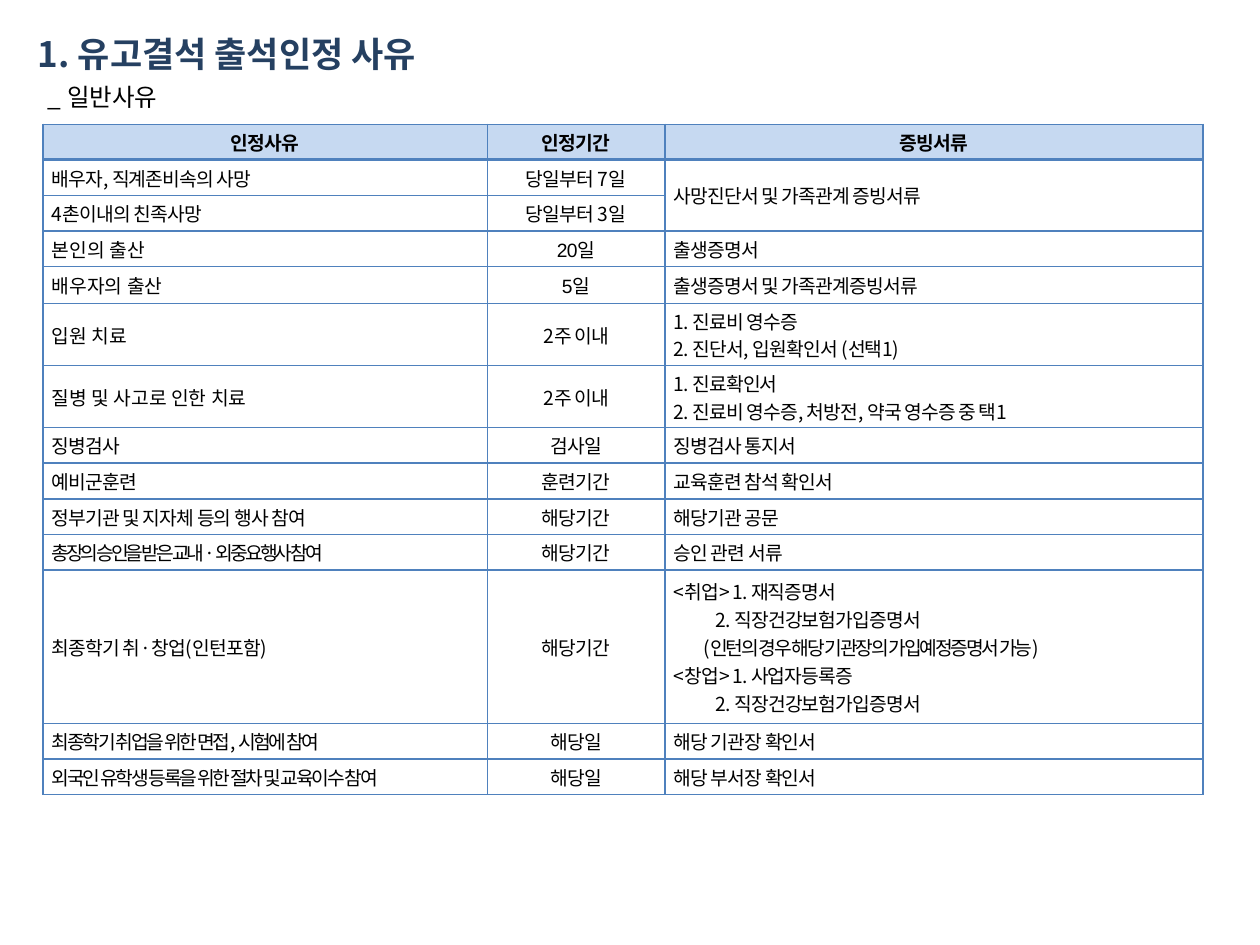
from lxml.etree import SubElement
from pptx import Presentation
from pptx.dml.color import RGBColor
from pptx.enum.text import MSO_ANCHOR, MSO_AUTO_SIZE, PP_ALIGN
from pptx.oxml.ns import qn
from pptx.util import Pt

FONT = "Noto Sans CJK KR"
BLUE, PALE, NAVY, BLACK = "4F81BD", "C6D9F1", "254061", "000000"
COLS = [254, 101.5, 307.5]
LOW = 20.35
HIGH = {4: 21.1, 5: 35.5, 6: 35.5, 11: 87.7}
HEAD = ["인정사유", "인정기간", "증빙서류"]
DEATH = "사망진단서 및 가족관계 증빙서류"
ROWS = [
    ["배우자, 직계존비속의 사망", "당일부터 7일", DEATH],
    ["4촌이내의 친족사망", "당일부터 3일", ""],
    ["본인의 출산", "20일", "출생증명서"],
    ["배우자의 출산", "5일", "출생증명서 및 가족관계증빙서류"],
    ["입원 치료", "2주 이내", "1. 진료비 영수증\n2. 진단서, 입원확인서 (선택1)"],
    ["질병 및 사고로 인한 치료", "2주 이내",
     "1. 진료확인서\n2. 진료비 영수증, 처방전, 약국 영수증 중 택1"],
    ["징병검사", "검사일", "징병검사 통지서"],
    ["예비군훈련", "훈련기간", "교육훈련 참석 확인서"],
    ["정부기관 및 지자체 등의 행사 참여", "해당기간", "해당기관 공문"],
    ["총장의 승인을 받은 교내·외 중요행사 참여", "해당기간", "승인 관련 서류"],
    ["최종학기 취·창업(인턴포함)", "해당기간",
     "<취업> 1. 재직증명서\n2. 직장건강보험가입증명서\n"
     "(인턴의 경우 해당 기관장의 가입예정증명서 가능)\n"
     "<창업> 1. 사업자등록증\n2. 직장건강보험가입증명서"],
    ["최종학기 취업을 위한 면접, 시험에 참여", "해당일", "해당 기관장 확인서"],
    ["외국인 유학생 등록을 위한 절차 및 교육이수 참여", "해당일", "해당 부서장 확인서"],
]
# Keys below are (row, column, line) in the table, header row included.
TRACK = {(3, 0, 0): 0, (4, 0, 0): 0, (5, 0, 0): 0, (6, 0, 0): 0,
         (10, 0, 0): -1.8, (11, 2, 2): -1.3, (12, 0, 0): -1.3, (13, 0, 0): -1.3}
INDENT = {(11, 2, 1): 24, (11, 2, 2): 17, (11, 2, 4): 24}
ARIAL = {(3, 1, 0), (4, 1, 0), (13, 0, 0)}


def rgb(code):
    return RGBColor.from_string(code)


def assign(item, values):
    for name, value in values.items():
        setattr(item, name, value)


def write(para, text, size, color=BLACK, bold=False, face=FONT, track=0):
    run = para.add_run()
    run.text = text
    assign(run.font, {"size": Pt(size), "bold": bold, "name": face})
    run.font.color.rgb = rgb(color)
    props = run.font._element
    props.set("spc", str(round(track * 100)))
    SubElement(props, qn("a:ea"), typeface=FONT)


def label(shape, box, text, size, color, bold=False):
    """Place a shape and fill it with one unwrapped line."""
    assign(shape, dict(zip(("left", "top", "width", "height"), map(Pt, box))))
    frame = shape.text_frame
    assign(frame, {"word_wrap": False, "auto_size": MSO_AUTO_SIZE.SHAPE_TO_FIT_TEXT,
                   "vertical_anchor": MSO_ANCHOR.TOP})
    para = frame.paragraphs[0]
    para.alignment = PP_ALIGN.LEFT
    write(para, text, size, color, bold)


def border(cell, row):
    props = cell._tc.get_or_add_tcPr()
    thick = {"T": 2 if row == 1 else 1, "B": 2 if row == 0 else 1}
    for side in "LRTB":
        line = SubElement(props, qn("a:ln" + side), w=str(Pt(thick.get(side, 1))))
        fill = SubElement(line, qn("a:solidFill"))
        SubElement(fill, qn("a:srgbClr"), val=BLUE)


def fill_cell(cell, text, row, col):
    assign(cell, {"margin_left": Pt(5.1), "margin_right": Pt(5.1),
                  "margin_top": Pt(1.4), "margin_bottom": Pt(1.4),
                  "vertical_anchor": MSO_ANCHOR.MIDDLE})
    border(cell, row)
    if row == 0:
        cell.fill.solid()
        cell.fill.fore_color.rgb = rgb(PALE)
    else:
        cell.fill.background()
    if not text:
        return
    frame = cell.text_frame
    for num, line in enumerate(text.split("\n")):
        key = (row, col, num)
        para = frame.add_paragraph() if num else frame.paragraphs[0]
        middle = row == 0 or col == 1
        para.alignment = PP_ALIGN.CENTER if middle else PP_ALIGN.JUSTIFY
        if key in INDENT:
            para._p.get_or_add_pPr().set("marL", str(Pt(INDENT[key])))
        write(para, line, 11, bold=row == 0,
              face="Arial" if key in ARIAL else FONT, track=TRACK.get(key, -0.5))


def add_grid(slide):
    data = [HEAD] + ROWS
    tall = [HIGH.get(row, LOW) for row in range(len(data))]
    frame = slide.shapes.add_table(len(data), len(COLS), Pt(24.5), Pt(71),
                                   Pt(sum(COLS)), Pt(sum(tall)))
    table = frame.table
    assign(table, {"first_row": False, "horz_banding": False})
    for col, width in zip(table.columns, COLS):
        col.width = Pt(width)
    for row, height in zip(table.rows, tall):
        row.height = Pt(height)
    for row, texts in enumerate(data):
        for col, text in enumerate(texts):
            fill_cell(table.cell(row, col), text, row, col)
    table.cell(1, 2).merge(table.cell(2, 2))


def main():
    deck = Presentation()
    assign(deck, {"slide_width": Pt(720), "slide_height": Pt(540)})
    slide = deck.slides.add_slide(deck.slide_layouts[5])
    label(slide.shapes.title, (14.4, 15, 255, 31.5),
          "1. 유고결석 출석인정 사유", 20, NAVY, True)
    note = slide.shapes.add_textbox(0, 0, 0, 0)
    label(note, (20.2, 43.2, 82, 24.5), "_ 일반사유", 14, BLACK)
    add_grid(slide)
    deck.save("out.pptx")


if __name__ == "__main__":
    main()
